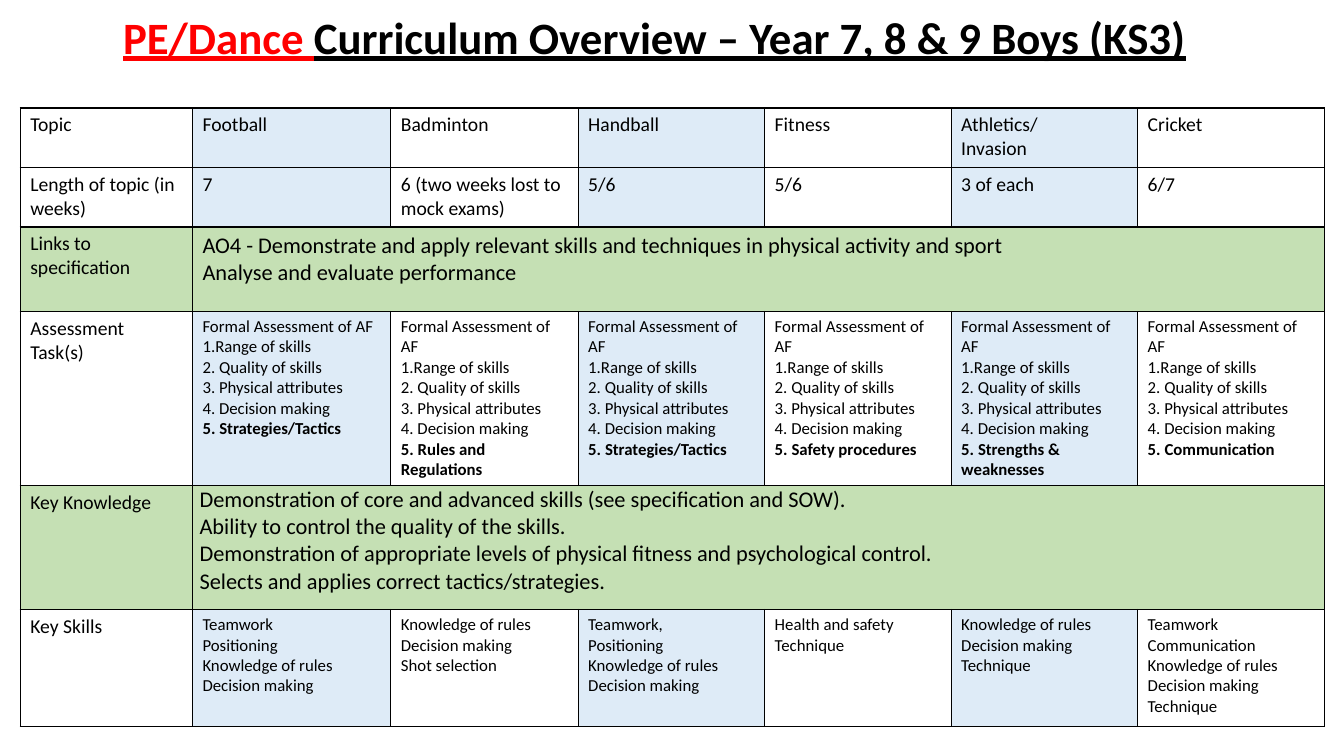
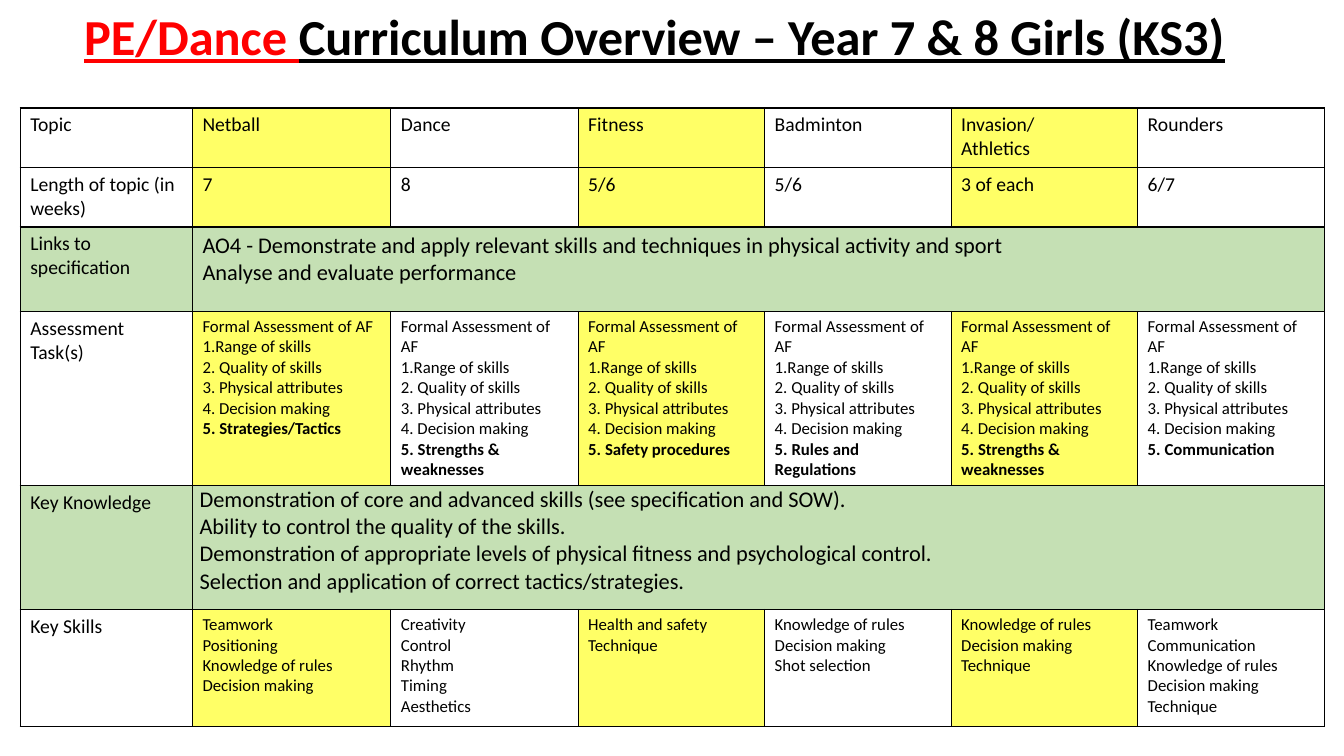
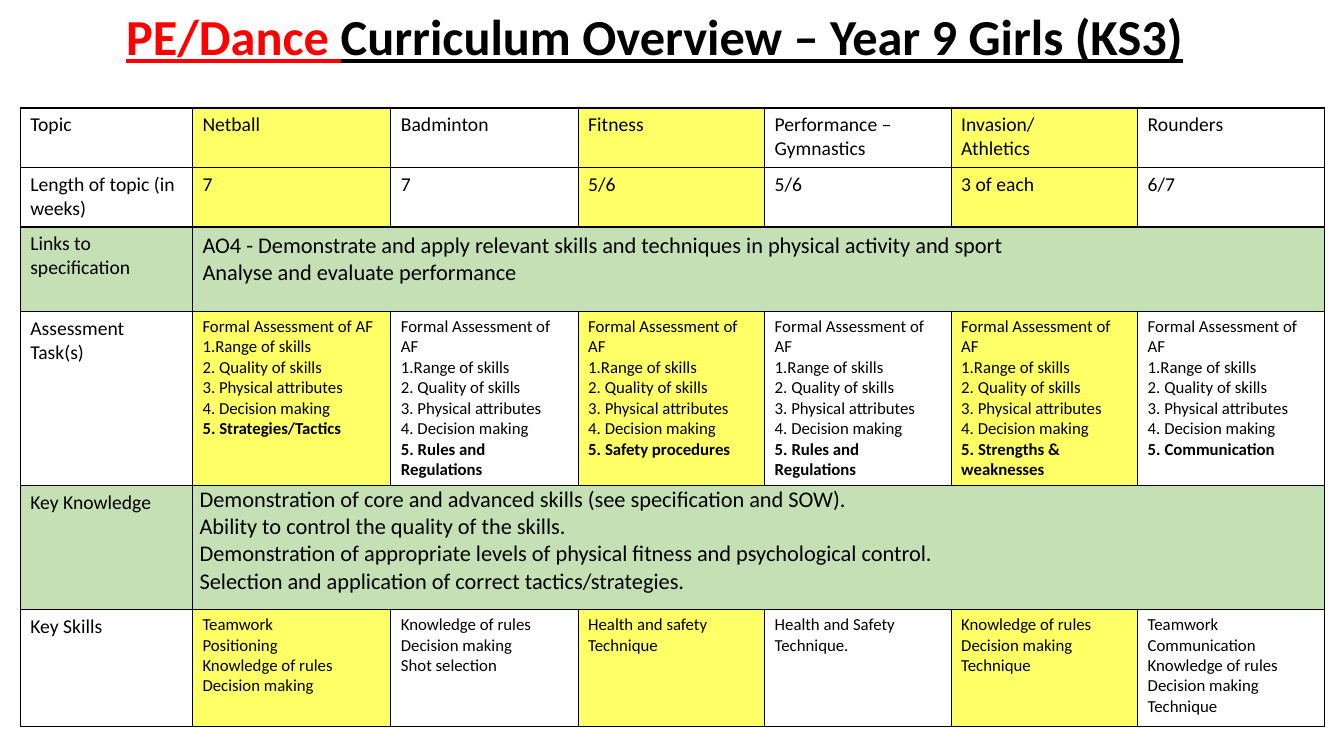
from lxml import etree
from pptx import Presentation
from pptx.dml.color import RGBColor
from pptx.enum.text import MSO_ANCHOR, PP_ALIGN
from pptx.oxml.ns import qn
from pptx.util import Cm, Pt

CENTER, MIDDLE = PP_ALIGN.CENTER, MSO_ANCHOR.MIDDLE
FONT = "Calibri"
COLORS = {"black": "000000", "red": "FF0000", "green": "C5E0B4",
          "blue": "DEEBF7", "yellow": "FFFF66"}

# Table grid and the text size of each row's body
COL_WIDTHS = [4.34, 5, 4.72] + [4.7] * 4
ROW_HEIGHTS = [1.5, 1.5, 2.13, 4.39, 3.12, 2.95]
ROW_SIZES = [14, 14, 16, 12, 16, 12]
LABELS = ["Topic", "Length of topic (in weeks)", "Links to specification",
          "Assessment Task(s)", "Key Knowledge", "Key Skills"]
SPAN_ROWS = (2, 4)
KNOWLEDGE_ROW = 4

# Wording shared by the slides; each line is a paragraph
LINKS = ("AO4 - Demonstrate and apply relevant skills and techniques in physical activity and sport\n"
         "Analyse and evaluate performance")
KNOWLEDGE = ("Demonstration of core and advanced skills (see specification and SOW).\n"
             "Ability to control the quality of the skills.\n"
             "Demonstration of appropriate levels of physical fitness and psychological control.\n")
ASSESSMENT = ("Formal Assessment of AF\n1.Range of skills\n2. Quality of skills\n"
              "3. Physical attributes\n4. Decision making\n")
TACTICS = "5. Strategies/Tactics"
RULES = "5. Rules and Regulations"
SAFETY = "5. Safety procedures"
STRENGTHS = "5. Strengths & weaknesses"
COMMUNICATION = "5. Communication"

TEAM_SKILLS = "Teamwork\nPositioning\nKnowledge of rules\nDecision making"
RACKET_SKILLS = "Knowledge of rules\nDecision making\nShot selection"
FITNESS_SKILLS = "Health and safety\nTechnique"
ATHLETIC_SKILLS = "Knowledge of rules\nDecision making\nTechnique"
STRIKING_SKILLS = "Teamwork\nCommunication\nKnowledge of rules\nDecision making\nTechnique"

# Topics: name, weeks, fifth assessment task, key skills
NETBALL = ("Netball", "7", TACTICS, TEAM_SKILLS)
FITNESS = ("Fitness", "5/6", SAFETY, FITNESS_SKILLS)
INVASION = ("Invasion/\nAthletics", "3 of each", STRENGTHS, ATHLETIC_SKILLS)
ROUNDERS = ("Rounders", "6/7", COMMUNICATION, STRIKING_SKILLS)

SLIDES = [
    {"title": "Year 7, 8 & 9 Boys (KS3)", "size": 32, "accent": "blue",
     "tactics": "Selects and applies correct tactics/strategies.",
     "topics": [
         ("Football", "7", TACTICS, TEAM_SKILLS),
         ("Badminton", "6 (two weeks lost to mock exams)", RULES, RACKET_SKILLS),
         ("Handball", "5/6", TACTICS, TEAM_SKILLS.replace("Teamwork", "Teamwork,")),
         FITNESS,
         ("Athletics/\nInvasion", "3 of each", STRENGTHS, ATHLETIC_SKILLS),
         ("Cricket", "6/7", COMMUNICATION, STRIKING_SKILLS)]},
    {"title": "Year 7 & 8 Girls (KS3)", "size": 36, "accent": "yellow",
     "tactics": "Selection and application of correct tactics/strategies.",
     "topics": [
         NETBALL,
         ("Dance", "8", STRENGTHS, "Creativity\nControl\nRhythm\nTiming\nAesthetics"),
         FITNESS,
         ("Badminton", "5/6", RULES, RACKET_SKILLS),
         INVASION,
         ROUNDERS]},
    {"title": "Year 9 Girls (KS3)", "size": 36, "accent": "yellow",
     "tactics": "Selection and application of correct tactics/strategies.",
     "topics": [
         NETBALL,
         ("Badminton", "7", RULES, RACKET_SKILLS),
         FITNESS,
         ("Performance – Gymnastics", "5/6", RULES, "Health and Safety\nTechnique."),
         INVASION,
         ROUNDERS]},
]


def add_text(p, text, size=14, color="black", bold=False, underline=False):
    r = p.add_run()
    r.text = text
    r.font.name, r.font.size = FONT, Pt(size)
    r.font.bold, r.font.underline = bold, underline
    r.font.color.rgb = RGBColor.from_string(COLORS[color])


def style_cell(cell, fill):
    """Give a cell thin black borders and a fill, or none."""
    tc_pr = cell._tc.get_or_add_tcPr()
    for side in ("lnL", "lnR", "lnT", "lnB"):
        ln = etree.SubElement(tc_pr, qn("a:" + side), w=str(Pt(1)))
        solid = etree.SubElement(ln, qn("a:solidFill"))
        etree.SubElement(solid, qn("a:srgbClr"), val=COLORS["black"])
    if fill:
        cell.fill.solid()
        cell.fill.fore_color.rgb = RGBColor.from_string(COLORS[fill])
    else:
        cell.fill.background()


prs = Presentation()
prs.slide_width, prs.slide_height = Cm(33.87), Cm(19.05)

for content in SLIDES:
    s = prs.slides.add_slide(prs.slide_layouts[6])

    # Title
    tf = s.shapes.add_textbox(Cm(0.94), Cm(-0.84), Cm(31.12), Cm(3.68)).text_frame
    tf.word_wrap, tf.vertical_anchor = True, MIDDLE
    p = tf.paragraphs[0]
    p.alignment, p.line_spacing = CENTER, 0.9
    heading = {"size": content["size"], "bold": True, "underline": True}
    add_text(p, "PE/Dance ", color="red", **heading)
    add_text(p, "Curriculum Overview – " + content["title"], **heading)

    # Table grid
    table = s.shapes.add_table(len(ROW_HEIGHTS), len(COL_WIDTHS), Cm(0.51), Cm(2.72),
                               Cm(sum(COL_WIDTHS)), Cm(sum(ROW_HEIGHTS))).table
    table.first_row = table.horz_banding = False
    for column, width in zip(table.columns, COL_WIDTHS):
        column.width = Cm(width)
    for row, height in zip(table.rows, ROW_HEIGHTS):
        row.height = Cm(height)

    # Row texts, without the label column
    names, weeks, tasks, skills = zip(*content["topics"])
    rows = [names, weeks, [LINKS], [ASSESSMENT + task for task in tasks],
            [KNOWLEDGE + content["tactics"]], skills]

    # Cells: green full-width rows, every other topic column in the accent
    for i, texts in enumerate(rows):
        for j in range(len(COL_WIDTHS)):
            accent = content["accent"] if j % 2 else None
            style_cell(table.cell(i, j), "green" if i in SPAN_ROWS else accent)
        if i in SPAN_ROWS:
            table.cell(i, 1).merge(table.cell(i, len(COL_WIDTHS) - 1))
        for j, text in enumerate([LABELS[i], *texts]):
            tf = table.cell(i, j).text_frame
            for k, line in enumerate(text.split("\n")):
                p = tf.add_paragraph() if k else tf.paragraphs[0]
                add_text(p, line, size=ROW_SIZES[i] if j else 14,
                         bold=line.startswith("5. "))

    knowledge = table.cell(KNOWLEDGE_ROW, 1)
    knowledge.margin_left = knowledge.margin_right = Cm(0.18)
    knowledge.margin_top = knowledge.margin_bottom = Cm(0)

prs.save("out.pptx")
